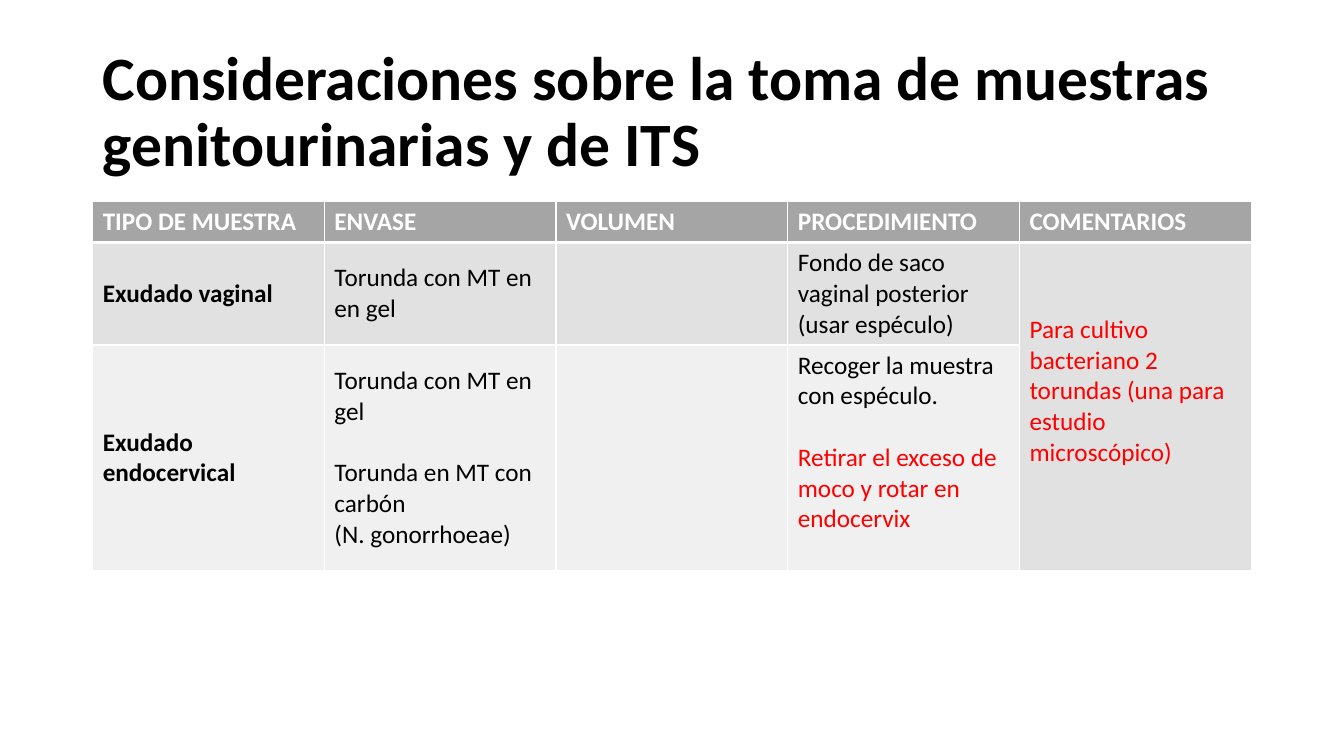
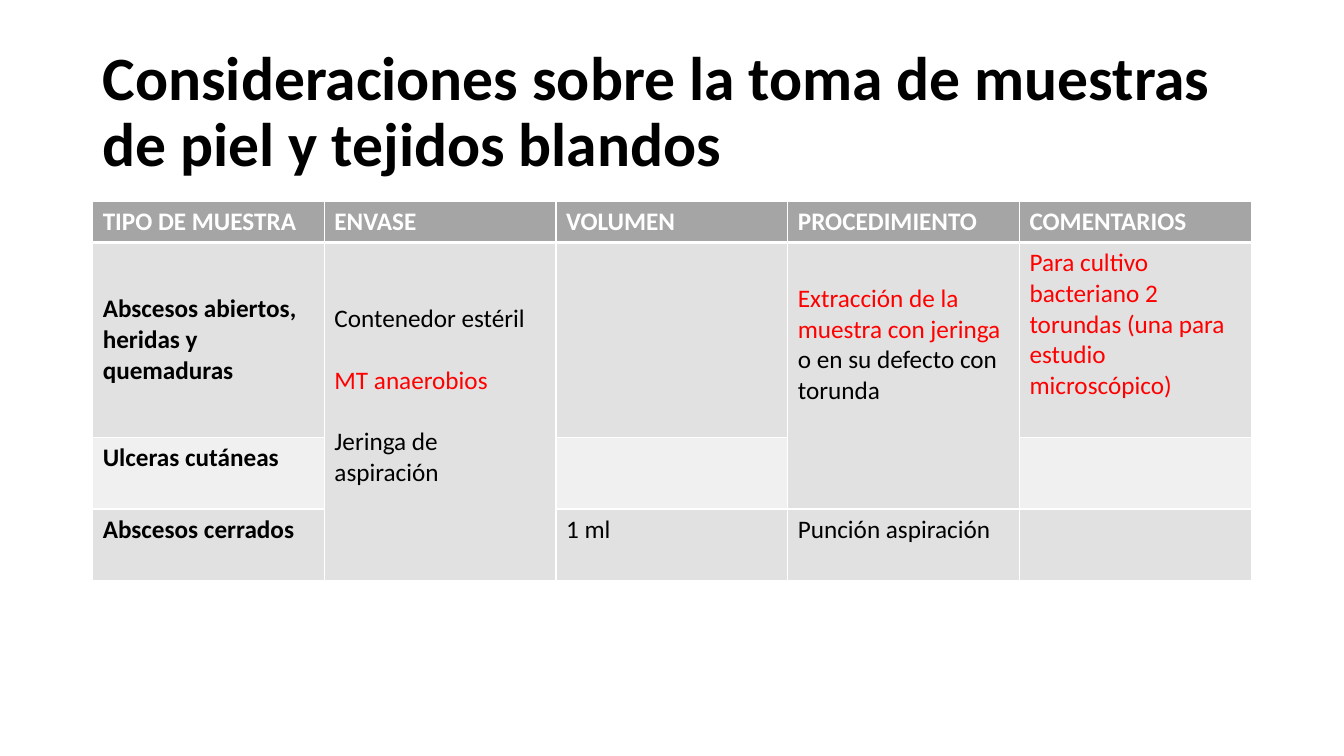
"""Builds two slides with tables on how to collect clinical samples."""
from dataclasses import dataclass

from lxml.etree import SubElement
from pptx import Presentation
from pptx.dml.color import RGBColor
from pptx.enum.text import MSO_ANCHOR, MSO_AUTO_SIZE, PP_ALIGN
from pptx.oxml import parse_xml
from pptx.oxml.ns import nsdecls, qn
from pptx.util import Inches, Pt


@dataclass(frozen=True)
class Theme:
    font: str = "Calibri"
    black: str = "000000"
    white: str = "FFFFFF"
    red: str = "FF0000"
    header: str = "A5A5A5"
    bands: tuple = ("E1E1E1", "F0F0F0")
    title_size: int = 44
    table_size: int = 18
    thin: int = 1
    thick: int = 3


theme = Theme()
deck = Presentation()
deck.slide_width, deck.slide_height = Inches(13.33), Inches(7.5)
column = deck.slide_width // 58
row = deck.slide_height // 75
line = Pt(22)
padding = Inches(0.05)


def add_text(para, text, size, colour, bold):
    for index, piece in enumerate(text.split("\n")):
        if index:
            para.add_line_break()
        span = para.add_run()
        span.text = piece
        span.font.name = theme.font
        span.font.size = Pt(size)
        span.font.bold = bold
        span.font.color.rgb = RGBColor.from_string(colour)


def add_borders(cell, top, bottom):
    properties = cell._tc.get_or_add_tcPr()
    sides = {"lnL": theme.thin, "lnR": theme.thin, "lnT": top, "lnB": bottom}
    for position, (side, width) in enumerate(sides.items()):
        border = parse_xml(f'<a:{side} w="{Pt(width)}" {nsdecls("a")}/>')
        fill = SubElement(border, qn("a:solidFill"))
        SubElement(fill, qn("a:srgbClr"), val=theme.white)
        properties.insert(position, border)


headings = ["TIPO DE MUESTRA", "ENVASE", "VOLUMEN", "PROCEDIMIENTO", "COMENTARIOS"]
black, red = theme.black, theme.red
two_swabs = [[("Para cultivo bacteriano 2 torundas (una para estudio microscópico)", red)]]

# each entry: title, lines per row, merges (start, end), texts by cell, spare lines below text
slides = [
    {
        "title": "Consideraciones sobre la toma de muestras genitourinarias y de ITS",
        "lines": [1, 3, 7],
        "merges": [((1, 4), (2, 4))],
        "texts": {
            (1, 0): [[("Exudado vaginal", black)]],
            (1, 1): [[("Torunda con MT en\nen gel", black)]],
            (1, 3): [[("Fondo de saco vaginal posterior (usar espéculo)", black)]],
            (1, 4): two_swabs,
            (2, 0): [[("Exudado endocervical", black)]],
            (2, 1): [
                [("Torunda con MT en gel", black)],
                [("Torunda en MT con carbón\n(N. gonorrhoeae)", black)],
            ],
            (2, 3): [
                [("Recoger la muestra con espéculo.", black)],
                [("Retirar el exceso de moco y rotar en endocervix", red)],
            ],
        },
        "spare": {(1, 4): 1, (2, 3): 1},
    },
    {
        "title": "Consideraciones sobre la toma de muestras de piel y tejidos blandos",
        "lines": [1, 6, 2, 2],
        "merges": [((1, 1), (3, 1)), ((1, 3), (2, 3))],
        "texts": {
            (1, 0): [[("Abscesos abiertos, heridas y quemaduras", black)]],
            (1, 1): [
                [("Contenedor estéril", black)],
                [("MT anaerobios", red)],
                [("Jeringa de aspiración", black)],
            ],
            (1, 3): [[
                ("Extracción de la muestra con jeringa ", red),
                ("o en su defecto con torunda", black),
            ]],
            (1, 4): two_swabs,
            (2, 0): [[("Ulceras cutáneas", black)]],
            (3, 0): [[("Abscesos cerrados", black)]],
            (3, 2): [[("1 ml", black)]],
            (3, 3): [[("Punción aspiración", black)]],
        },
        "spare": {(1, 1): 1, (1, 3): 2, (1, 4): 1, (2, 0): 1,
                  (3, 0): 1, (3, 2): 1, (3, 3): 1},
    },
]

for content in slides:
    page = deck.slides.add_slide(deck.slide_layouts[5])
    title = page.shapes.title
    title.left, title.top = 4 * column, 4 * row
    title.width, title.height = 50 * column, int(14.5 * row)
    frame = title.text_frame
    frame.word_wrap = True
    frame.auto_size = MSO_AUTO_SIZE.NONE
    frame.vertical_anchor = MSO_ANCHOR.MIDDLE
    para = frame.paragraphs[0]
    para.alignment = PP_ALIGN.LEFT
    para.line_spacing = 0.9
    add_text(para, content["title"], theme.title_size, theme.black, True)

    heights = [count * line + 2 * padding for count in content["lines"]]
    table = page.shapes.add_table(
        len(heights), len(headings), 4 * column, 20 * row, 50 * column, sum(heights)
    ).table
    for table_column in table.columns:
        table_column.width = 10 * column
    texts = {(0, index): [[(text, theme.white)]] for index, text in enumerate(headings)}
    texts.update(content["texts"])

    for row_index, height in enumerate(heights):
        table.rows[row_index].height = height
        is_header = row_index == 0
        band = theme.header if is_header else theme.bands[(row_index - 1) % 2]
        for column_index in range(len(headings)):
            place = (row_index, column_index)
            cell = table.cell(*place)
            cell.fill.solid()
            cell.fill.fore_color.rgb = RGBColor.from_string(band)
            cell.vertical_anchor = MSO_ANCHOR.TOP if is_header else MSO_ANCHOR.MIDDLE
            cell.margin_bottom = padding + content["spare"].get(place, 0) * line
            add_borders(
                cell,
                theme.thick if row_index == 1 else theme.thin,
                theme.thick if is_header else theme.thin,
            )
            for index, spans in enumerate(texts.get(place, [])):
                frame = cell.text_frame
                para = frame.add_paragraph() if index else frame.paragraphs[0]
                para.space_before = line if index else 0
                for text, colour in spans:
                    add_text(para, text, theme.table_size, colour,
                             is_header or column_index == 0)

    for start, end in content["merges"]:
        table.cell(*start).merge(table.cell(*end))

deck.save("out.pptx")
